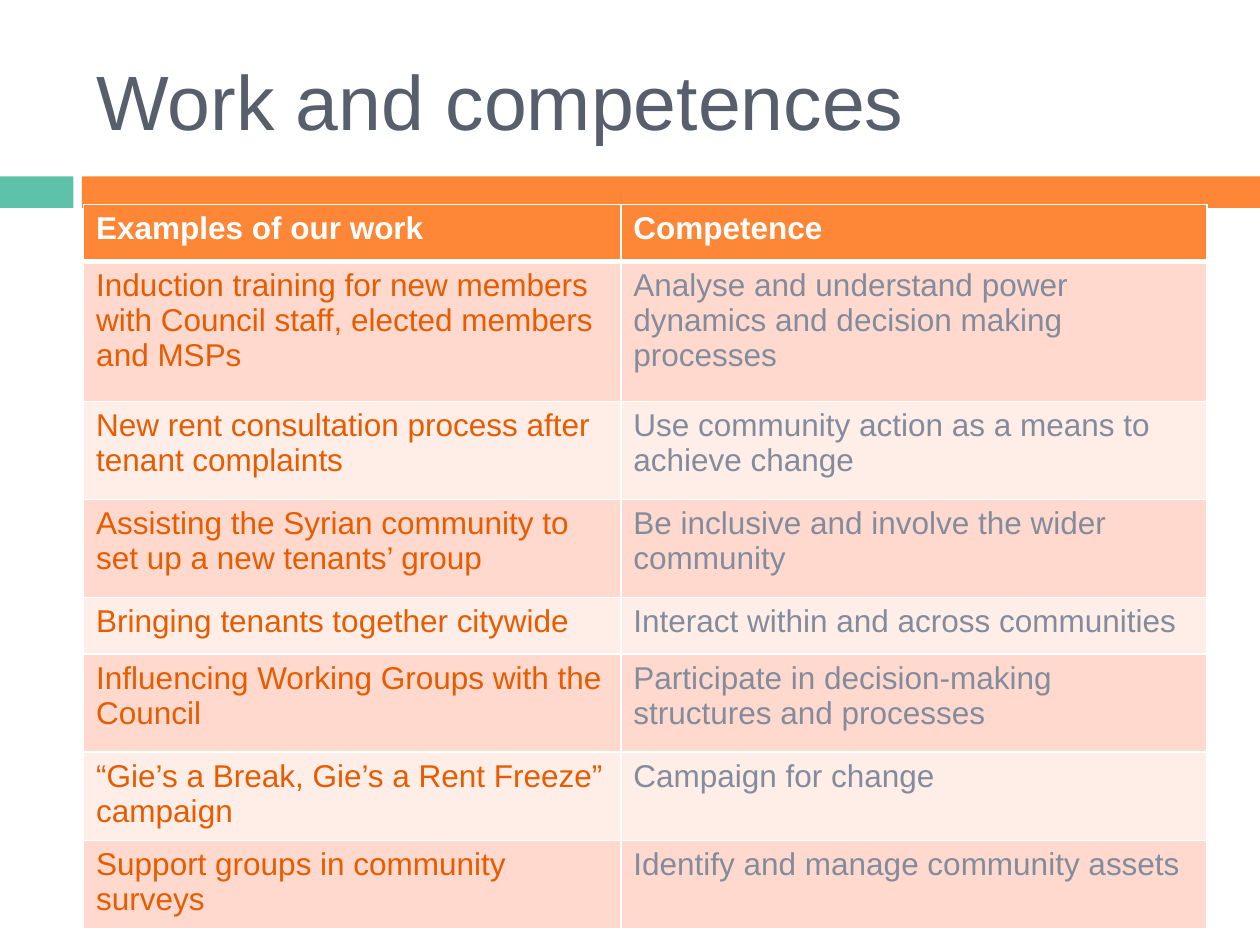
from dataclasses import dataclass

from lxml import etree
from pptx import Presentation
from pptx.dml.color import RGBColor
from pptx.enum.shapes import MSO_SHAPE
from pptx.enum.text import MSO_ANCHOR
from pptx.oxml.ns import qn
from pptx.util import Pt

RECTANGLE = MSO_SHAPE.RECTANGLE
MIDDLE = MSO_ANCHOR.MIDDLE


@dataclass(frozen=True)
class Theme:
    font: str = "Arial"
    title_size: int = 44
    table_size: int = 18
    title: str = "575F6D"
    teal: str = "5EC2AA"
    orange: str = "FE8637"
    white: str = "FFFFFF"
    bands: tuple = ("FFD9CE", "FFEDE8")
    columns: tuple = ("E75C01", "838C9C")


THEME = Theme()
HEADINGS = ("Examples of our work", "Competence")
WORK = [
    ("Induction training for new members with Council staff, elected members and MSPs",
     "Analyse and understand power dynamics and decision making processes"),
    ("New rent consultation process after tenant complaints",
     "Use community action as a means to achieve change"),
    ("Assisting the Syrian community to set up a new tenants’ group",
     "Be inclusive and involve the wider community"),
    ("Bringing tenants together citywide",
     "Interact within and across communities"),
    ("Influencing Working Groups with the Council",
     "Participate in decision-making structures and processes"),
    ("“Gie’s a Break, Gie’s a Rent Freeze” campaign",
     "Campaign for change"),
    ("Support groups in community surveys",
     "Identify and manage community assets"),
]
COLUMN_WIDTHS = (307, 335)
ROW_HEIGHTS = (32.5, 80, 56, 56, 32.5, 56, 50.4, 50.4)


def add_run(paragraph, text, size, color, bold=False):
    run = paragraph.add_run()
    run.text = text
    run.font.name = THEME.font
    run.font.size = Pt(size)
    run.font.bold = bold
    run.font.color.rgb = RGBColor.from_string(color)


def add_bar(slide, left, top, width, height, color):
    bar = slide.shapes.add_shape(RECTANGLE, Pt(left), Pt(top), Pt(width), Pt(height))
    bar.shadow.inherit = False
    bar.fill.solid()
    bar.fill.fore_color.rgb = RGBColor.from_string(color)
    bar.line.fill.background()


def add_divider(slide, left, top, width, height):
    """Short teal bar, a gap, then an orange bar to the right edge."""
    teal_width, gap = 42, 4.8
    add_bar(slide, left, top, teal_width, height, THEME.teal)
    orange_left = left + teal_width + gap
    add_bar(slide, orange_left, top, left + width - orange_left, height, THEME.orange)


def add_title(slide, left, top, width, height):
    title = slide.shapes.add_textbox(Pt(left), Pt(top), Pt(width), Pt(height))
    frame = title.text_frame
    frame.word_wrap = True
    frame.vertical_anchor = MIDDLE
    add_run(frame.paragraphs[0], "Work and competences", THEME.title_size, THEME.title)


def set_borders(cell, widths):
    """Draw white borders; widths maps each side (L, R, T, B) to points."""
    properties = cell._tc.get_or_add_tcPr()
    for side, width in widths.items():
        line = etree.SubElement(properties, qn(f"a:ln{side}"), w=str(Pt(width)))
        fill = etree.SubElement(line, qn("a:solidFill"))
        etree.SubElement(fill, qn("a:srgbClr"), val=THEME.white)


def add_work_table(slide, left, top):
    rows = [HEADINGS, *WORK]
    table = slide.shapes.add_table(
        len(rows), len(HEADINGS), Pt(left), Pt(top),
        Pt(sum(COLUMN_WIDTHS)), Pt(sum(ROW_HEIGHTS))).table
    for column, width in zip(table.columns, COLUMN_WIDTHS):
        column.width = Pt(width)
    for r, (texts, height) in enumerate(zip(rows, ROW_HEIGHTS)):
        table.rows[r].height = Pt(height)
        is_header = r == 0
        background = THEME.orange if is_header else THEME.bands[(r - 1) % 2]
        top_width = 3 if r == 1 else 1
        bottom_width = 3 if is_header else 1
        for c, text in enumerate(texts):
            cell = table.cell(r, c)
            set_borders(cell, {"L": 1, "R": 1, "T": top_width, "B": bottom_width})
            cell.fill.solid()
            cell.fill.fore_color.rgb = RGBColor.from_string(background)
            color = THEME.white if is_header else THEME.columns[c]
            add_run(cell.text_frame.paragraphs[0], text, THEME.table_size, color, is_header)


def main():
    deck = Presentation()
    deck.slide_width, deck.slide_height = Pt(720), Pt(540)
    slide = deck.slides.add_slide(deck.slide_layouts[6])
    add_divider(slide, 0, 100.8, 720, 18)
    add_title(slide, 48, 18, 642, 78)
    add_work_table(slide, 47.8, 116.9)
    deck.save("out.pptx")


if __name__ == "__main__":
    main()
